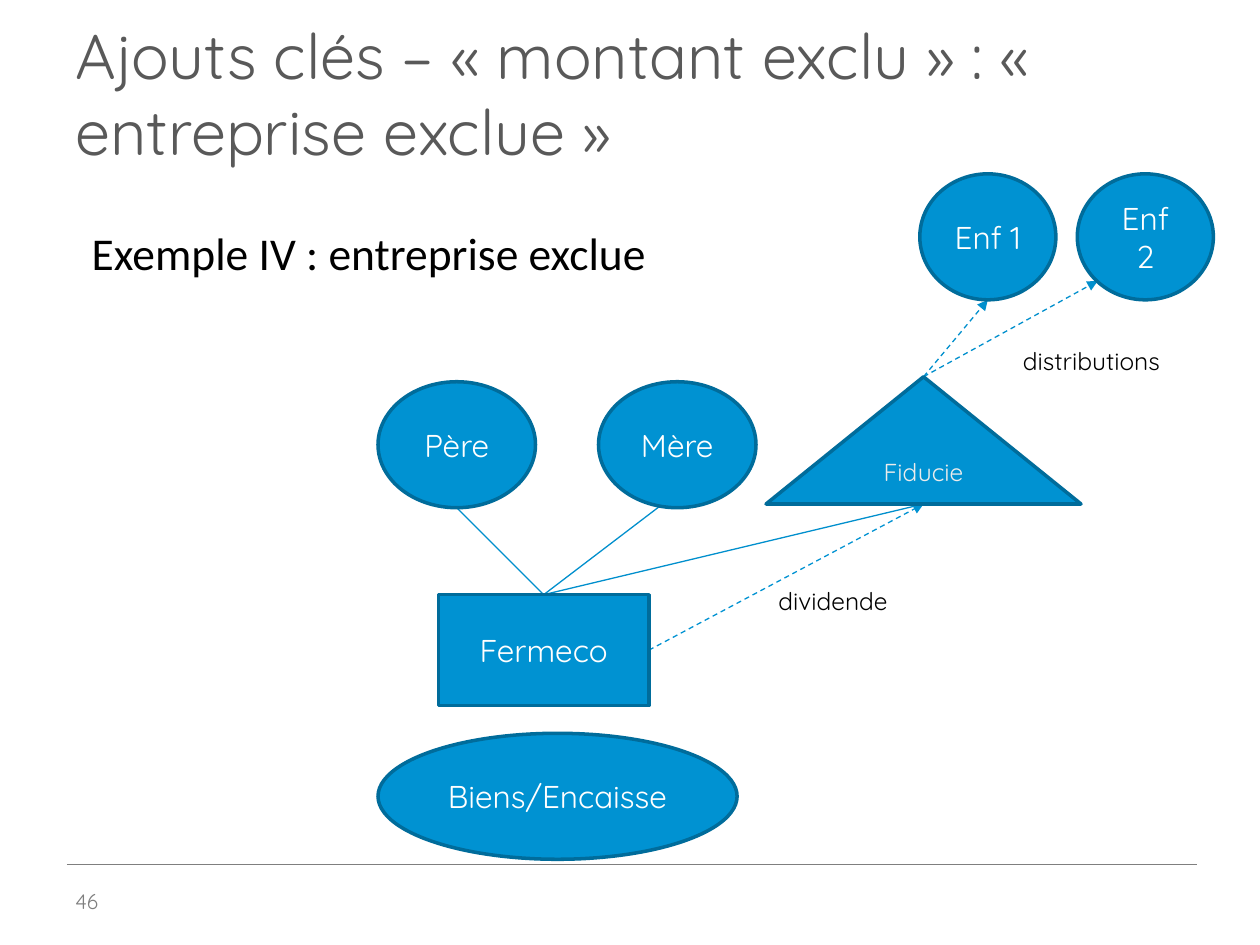
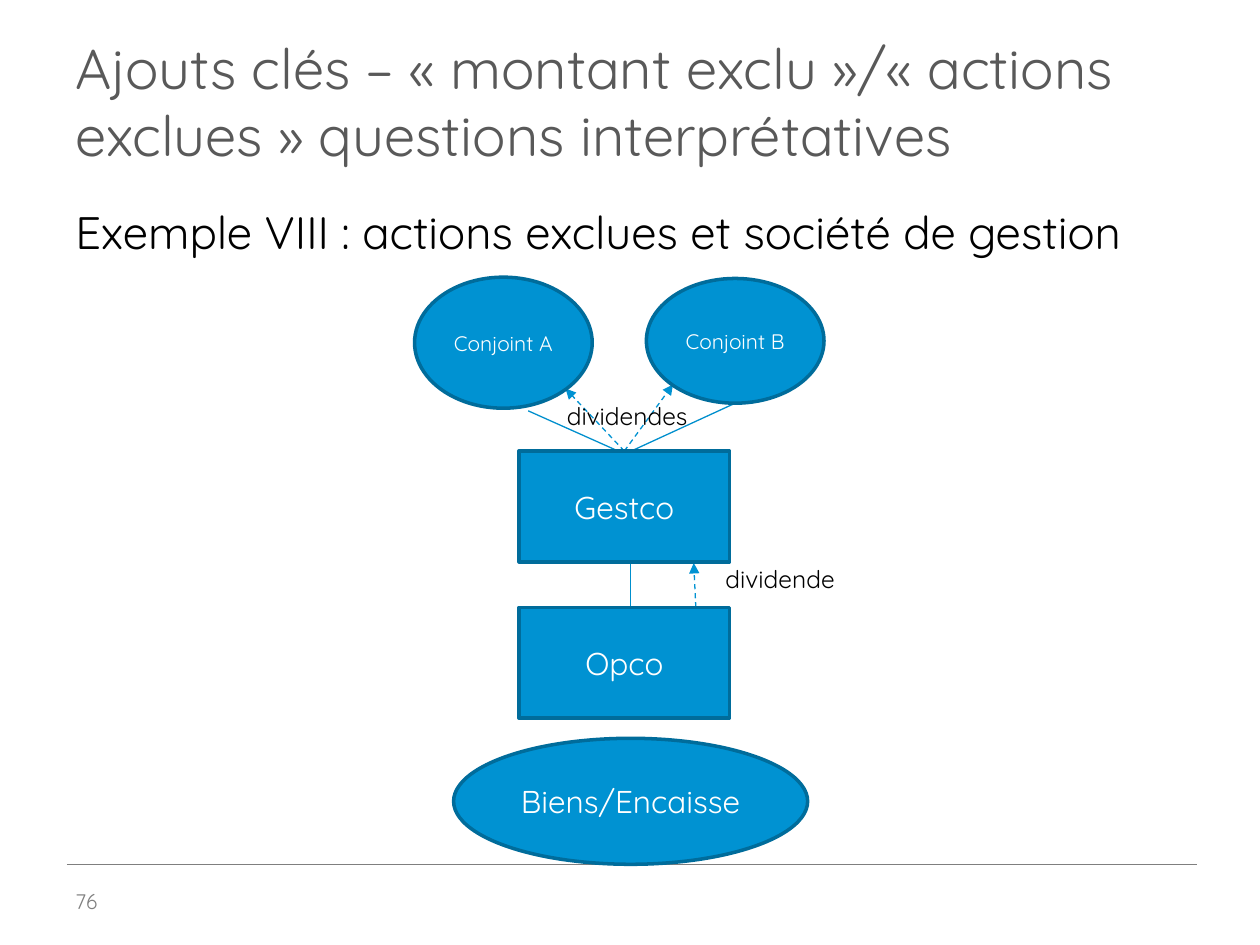
from dataclasses import dataclass

from lxml import etree
from pptx import Presentation
from pptx.dml.color import RGBColor
from pptx.enum.dml import MSO_LINE
from pptx.enum.shapes import MSO_CONNECTOR, MSO_SHAPE
from pptx.enum.text import MSO_ANCHOR, MSO_AUTO_SIZE, PP_ALIGN
from pptx.oxml.ns import qn
from pptx.util import Inches, Pt

OVAL = MSO_SHAPE.OVAL
RECT = MSO_SHAPE.RECTANGLE
PEAK = MSO_SHAPE.ISOSCELES_TRIANGLE
STRAIGHT = MSO_CONNECTOR.STRAIGHT
DASH = MSO_LINE.DASH
TOP, MIDDLE, BOTTOM = MSO_ANCHOR.TOP, MSO_ANCHOR.MIDDLE, MSO_ANCHOR.BOTTOM
LEFT, CENTER = PP_ALIGN.LEFT, PP_ALIGN.CENTER
FIT = MSO_AUTO_SIZE.SHAPE_TO_FIT_TEXT


@dataclass(frozen=True)
class Theme:
    """Colours, fonts and type sizes of the deck."""

    fill: str = "0092D2"
    edge: str = "006C9B"
    link: str = "008FCD"
    title: str = "595959"
    foot: str = "7F7F7F"
    ink: str = "000000"
    white: str = "FFFFFF"
    pale: str = "ECECEC"
    font: str = "Quicksand"
    plain: str = "Calibri"
    large: int = 36
    medium: int = 32
    head: int = 26
    node: int = 18
    label: int = 14
    small: int = 12


@dataclass(frozen=True)
class Box:
    """A rectangle in inches."""

    left: float
    top: float
    width: float
    height: float

    def inset(self, left, top, width, height):
        """Return a box placed from this one's corner."""
        return Box(self.left + left, self.top + top, width, height)

    def spot(self, across, down):
        """Return a point at the given fractions of the box."""
        return self.left + across * self.width, self.top + down * self.height

    def frame(self):
        """Return the four lengths of the box."""
        return [Inches(n) for n in (self.left, self.top, self.width, self.height)]


THEME = Theme()
TITLE = Box(0.5, 0.3, 9, 1.08)
NUMBER = Box(0.5, 6.95, 1.07, 0.4)
FIRM = (1.67, 0.88)


def write(shape, text, size, color, font=THEME.font, align=LEFT, anchor=TOP):
    """Put styled text in a shape."""
    frame = shape.text_frame
    frame.text = text
    frame.word_wrap = True
    frame.vertical_anchor = anchor
    para = frame.paragraphs[0]
    para.alignment = align
    style = para.runs[0].font
    style.name, style.size = font, Pt(size)
    style.color.rgb = RGBColor.from_string(color)
    return frame


def note(slide, box, text, size, color, **style):
    """Add a wrapped text box."""
    return write(slide.shapes.add_textbox(*box.frame()), text, size, color, **style)


def label(slide, box, text, size=THEME.label, font=THEME.font):
    """Add a one-line text box that fits its text."""
    frame = note(slide, box, text, size, THEME.ink, font=font)
    frame.word_wrap = False
    frame.auto_size = FIT


def node(slide, kind, box, text, size=THEME.node, color=THEME.white):
    """Add a filled shape with centred text."""
    shape = slide.shapes.add_shape(kind, *box.frame())
    shape.shadow.inherit = False
    shape.fill.solid()
    shape.fill.fore_color.rgb = RGBColor.from_string(THEME.fill)
    shape.line.color.rgb = RGBColor.from_string(THEME.edge)
    shape.line.width = Pt(2)
    write(shape, text, size, color, align=CENTER, anchor=MIDDLE)


def link(slide, start, end, color=THEME.link, width=0.75):
    """Add a straight line without shadow."""
    ends = [Inches(n) for n in (*start, *end)]
    line = slide.shapes.add_connector(STRAIGHT, *ends)
    line.line.color.rgb = RGBColor.from_string(color)
    line.line.width = Pt(width)
    etree.SubElement(line._element.spPr, qn("a:effectLst"))
    return line


def arrow(slide, start, end, color=THEME.link):
    """Add a dashed line with an arrowhead."""
    line = link(slide, start, end, color)
    line.line.dash_style = DASH
    stroke = line._element.spPr.find(qn("a:ln"))
    etree.SubElement(stroke, qn("a:tailEnd"), type="triangle")


def page(deck, title, size, number):
    """Add a slide with its title, rule and page number."""
    slide = deck.slides.add_slide(deck.slide_layouts[6])
    link(slide, (0.53, 6.86), (9.5, 6.86), THEME.foot, 0.25)
    note(slide, TITLE, title, size, THEME.title, anchor=BOTTOM)
    note(slide, NUMBER, number, THEME.small, THEME.foot, anchor=MIDDLE)
    return slide


def family(slide, box):
    """Draw the farm company, its owners and the trust."""
    father, mother = [box.inset(n * 1.75, 1.65, 1.25, 1) for n in range(2)]
    kids = [box.inset(4.3 + n * 1.25, 0, 1.08, 1) for n in range(2)]
    trust = box.inset(3.08, 1.61, 2.5, 1.01)
    farm = box.inset(0.48, 3.34, *FIRM)

    for start in (father.spot(0.5, 1), mother.spot(0.66, 0.73), trust.spot(0.5, 1)):
        link(slide, start, farm.spot(0.5, 0))
    for end in (kids[0].spot(0.5, 1), kids[1].spot(0.15, 0.85)):
        arrow(slide, trust.spot(0.5, 0), end)
    arrow(slide, farm.spot(1, 0.5), trust.spot(0.5, 1), THEME.fill)

    node(slide, RECT, farm, "Fermeco")
    node(slide, OVAL, father, "Père")
    node(slide, OVAL, mother, "Mère")
    node(slide, OVAL, box.inset(0, 4.44, 2.85, 1), "Biens/Encaisse")
    node(slide, PEAK, trust, "Fiducie", THEME.label, THEME.pale)
    for rank, kid in enumerate(kids, 1):
        node(slide, OVAL, kid, f"Enf {rank}")
    label(slide, box.inset(3.08, 3.22, 1.17, 0.34), "dividende")
    label(slide, box.inset(5.02, 1.32, 1.3, 0.34), "distributions")


def holding(slide, box):
    """Draw the spouses, their holding and its company."""
    left = box.inset(0, 0, 1.41, 1.04)
    right = box.inset(1.84, 0.01, 1.41, 0.99)
    parent, child = [box.inset(0.83, 1.38 + n * 1.24, *FIRM) for n in range(2)]

    link(slide, left.spot(0.64, 1.02), parent.spot(0.53, 0.05))
    link(slide, right.spot(0.5, 1), parent.spot(0.51, 0.02))
    link(slide, parent.spot(0.53, 1), child.spot(0.53, 0))
    arrow(slide, child.spot(0.84, 0), parent.spot(0.83, 1.01), THEME.fill)
    for end in (left.spot(0.85, 0.85), right.spot(0.15, 0.85)):
        arrow(slide, parent.spot(0.5, 0), end, THEME.fill)

    node(slide, OVAL, left, "Conjoint A", THEME.small)
    node(slide, OVAL, right, "Conjoint B", THEME.small)
    node(slide, RECT, parent, "Gestco")
    node(slide, RECT, child, "Opco")
    node(slide, OVAL, box.inset(0.31, 3.66, 2.81, 1), "Biens/Encaisse")
    label(slide, box.inset(2.37, 2.23, 1.17, 0.34), "dividende")
    label(slide, box.inset(1.11, 0.93, 1.24, 0.34), "dividendes")


def main():
    """Build and save the deck."""
    deck = Presentation()
    deck.slide_width, deck.slide_height = Inches(10), Inches(7.5)

    slide = page(deck, "Ajouts clés – « montant exclu » : « entreprise exclue »",
                 THEME.large, "46")
    family(slide, Box(3, 1.38, 6.63, 5.44))
    label(slide, Box(0.63, 1.74, 4.64, 0.54), "Exemple IV : entreprise exclue",
          THEME.head, THEME.plain)

    slide = page(deck, "Ajouts clés – « montant exclu »/« actions exclues » questions interprétatives",
                 THEME.medium, "76")
    note(slide, Box(0.5, 1.57, 9, 5.13),
         "Exemple VIII : actions exclues et société de gestion", THEME.head, THEME.ink)
    holding(slide, Box(3.29, 2.2, 3.25, 4.66))

    deck.save("out.pptx")


if __name__ == "__main__":
    main()
